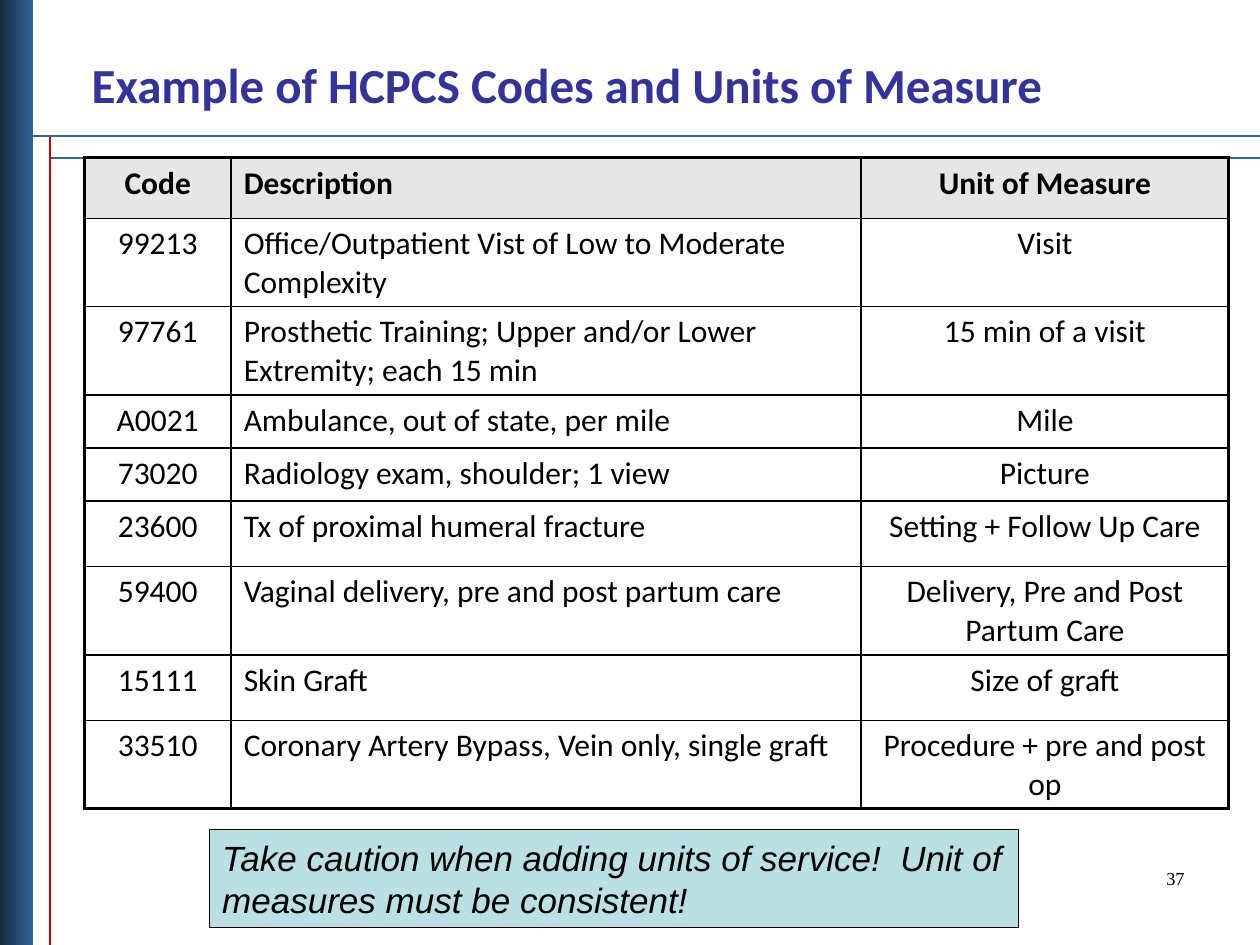
import pptx
import pptx.dml.color
import pptx.enum.shapes
import pptx.enum.text
import pptx.oxml.ns
import pptx.util
import lxml.etree

Cm, Pt = pptx.util.Cm, pptx.util.Pt
ALIGN, ANCHOR = pptx.enum.text.PP_ALIGN, pptx.enum.text.MSO_ANCHOR
COLORS = {
    "black": "000000", "white": "FFFFFF", "gray": "E6E6E6", "teal": "BBE0E3",
    "title": "333399", "blue": "336699", "navy": "14293D", "red": "CC0000",
}
THICK, THIN = 2.25, 1


def color(name):
    return pptx.dml.color.RGBColor.from_string(COLORS[name])


def node(parent, tag, **attrs):
    return lxml.etree.SubElement(parent, pptx.oxml.ns.qn(tag), attrs)


class Deck:
    """Holds the text style and the current slide; boxes are (left, top, width, height) in cm."""

    def __init__(self, font):
        self.font = font
        self.file = pptx.Presentation()
        self.file.slide_width, self.file.slide_height = Cm(25.4), Cm(19.05)
        self.slide = self.file.slides.add_slide(self.file.slide_layouts[6])
        self.shapes = self.slide.shapes

    def text(self, frame, words, size, ink="black", font=None, align=ALIGN.LEFT,
             bold=False, italic=False):
        frame.word_wrap = True
        para = frame.paragraphs[0]
        para.alignment = align
        run = para.add_run()
        run.text = words
        run.font.name, run.font.size = font or self.font, Pt(size)
        run.font.bold, run.font.italic = bold, italic
        run.font.color.rgb = color(ink)

    def line(self, start, end, ink, width):
        kind = pptx.enum.shapes.MSO_CONNECTOR.STRAIGHT
        rule = self.shapes.add_connector(kind, *map(Cm, start + end))
        rule.line.color.rgb, rule.line.width = color(ink), Pt(width)
        node(rule._element.spPr, "a:effectLst")

    def rect(self, box):
        kind = pptx.enum.shapes.MSO_SHAPE.RECTANGLE
        shape = self.shapes.add_shape(kind, *map(Cm, box))
        shape.shadow.inherit = False
        return shape

    def band(self, box, left, right):
        """Draws a rectangle shaded from left to right."""
        shape = self.rect(box)
        shape.line.fill.background()
        shape.fill.gradient()
        shape.fill.gradient_angle = 0
        for stop, ink in zip(shape.fill.gradient_stops, (left, right)):
            stop.color.rgb = color(ink)

    def note(self, box, words, fill, **style):
        shape = self.rect(box)
        shape.fill.solid()
        shape.fill.fore_color.rgb = color(fill)
        shape.line.color.rgb, shape.line.width = color("black"), Pt(0.75)
        shape.text_frame.vertical_anchor = ANCHOR.MIDDLE
        self.text(shape.text_frame, words, **style)

    def label(self, box, words, anchor=ANCHOR.TOP, **style):
        frame = self.shapes.add_textbox(*map(Cm, box)).text_frame
        frame.vertical_anchor = anchor
        self.text(frame, words, **style)

    def edge(self, cell, widths):
        """Sets the left, right, top and bottom borders, in that order."""
        props = cell._tc.get_or_add_tcPr()
        for side, width in zip("LRTB", widths):
            rule = node(props, "a:ln" + side, w=str(Pt(width)))
            node(node(rule, "a:solidFill"), "a:srgbClr", val=COLORS["black"])

    def table(self, spot, cols, rows, data, aligns, size):
        box = spot + (sum(cols), sum(rows))
        grid = self.shapes.add_table(len(rows), len(cols), *map(Cm, box)).table
        grid.horz_banding = False
        for col, width in zip(grid.columns, cols):
            col.width = Cm(width)
        for r, (height, texts) in enumerate(zip(rows, data)):
            grid.rows[r].height = Cm(height)
            head = r == 0
            for c, words in enumerate(texts):
                cell = grid.cell(r, c)
                outer = (c == 0, c == len(cols) - 1, head, r == len(rows) - 1)
                self.edge(cell, [THICK if out else THIN for out in outer])
                cell.fill.solid()
                cell.fill.fore_color.rgb = color("gray" if head else "white")
                self.text(cell.text_frame, words, size, align=aligns[c], bold=head)

    def save(self):
        self.file.save("out.pptx")


CODES = [
    ("Code", "Description", "Unit of Measure"),
    ("99213", "Office/Outpatient Vist of Low to Moderate Complexity", "Visit"),
    ("97761", "Prosthetic Training; Upper and/or Lower Extremity; each 15 min",
     "15 min of a visit"),
    ("A0021", "Ambulance, out of state, per mile", "Mile"),
    ("73020", "Radiology exam, shoulder; 1 view", "Picture"),
    ("23600", "Tx of proximal humeral fracture", "Setting + Follow Up Care"),
    ("59400", "Vaginal delivery, pre and post partum care",
     "Delivery, Pre and Post Partum Care"),
    ("15111", "Skin Graft", "Size of graft"),
    ("33510", "Coronary Artery Bypass, Vein only, single graft",
     "Procedure + pre and post op"),
]


def main():
    deck = Deck("Calibri")
    deck.line((1.01, 3.18), (25.4, 3.18), "blue", 1)
    deck.line((1.01, 2.74), (1.01, 19.05), "red", 0.75)
    deck.line((0, 2.74), (25.4, 2.74), "blue", 1.5)
    deck.band((0, 0, 0.66, 19.05), "navy", "blue")
    deck.label((1.6, 0, 22.23, 3.38), "Example of HCPCS Codes and Units of Measure",
               anchor=ANCHOR.MIDDLE, size=28, ink="title", bold=True)
    short, mid, tall = 1.07, 1.32, 1.78
    deck.table((1.7, 3.18), cols=(2.96, 12.7, 7.41),
               rows=(1.22, tall, tall, short, short, mid, tall, mid, tall),
               data=CODES, aligns=(ALIGN.CENTER, ALIGN.LEFT, ALIGN.CENTER), size=18)
    deck.note((4.23, 16.72, 16.3, 1.98),
              "Take caution when adding units of service!  Unit of measures must be consistent!",
              fill="teal", size=20, font="Arial", italic=True)
    deck.label((18.2, 17.36, 5.93, 1.32), "37", size=10.5, font="Times New Roman",
               align=ALIGN.RIGHT)
    deck.save()


if __name__ == "__main__":
    main()
